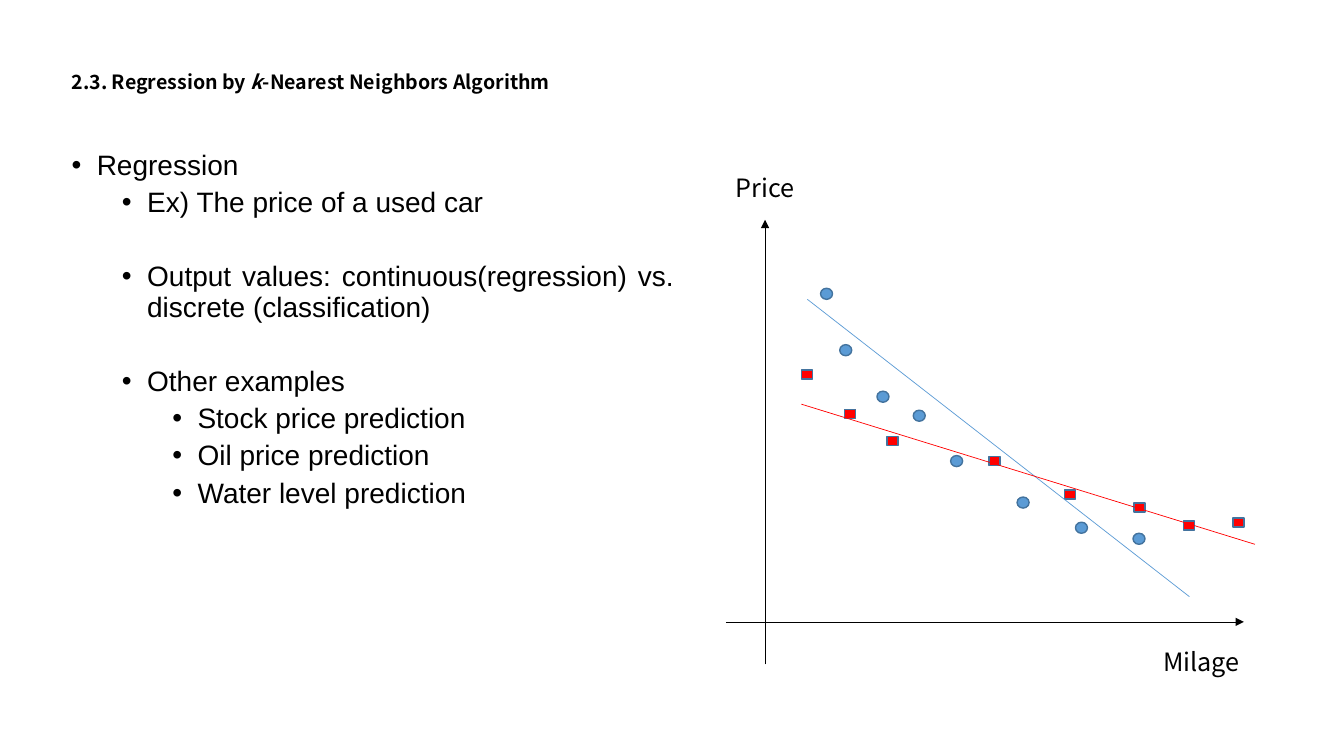
from lxml import etree
from pptx import Presentation
from pptx.dml.color import RGBColor
from pptx.enum.shapes import MSO_CONNECTOR, MSO_SHAPE
from pptx.enum.text import MSO_ANCHOR, MSO_AUTO_SIZE, PP_ALIGN
from pptx.oxml.ns import qn
from pptx.util import Pt

STRAIGHT = MSO_CONNECTOR.STRAIGHT
OVAL, RECTANGLE = MSO_SHAPE.OVAL, MSO_SHAPE.RECTANGLE
LEFT, JUSTIFY = PP_ALIGN.LEFT, PP_ALIGN.JUSTIFY
MIDDLE, TOP = MSO_ANCHOR.MIDDLE, MSO_ANCHOR.TOP
NO_FIT = MSO_AUTO_SIZE.NONE

SANS, BODY_FONT = "Noto Sans CJK KR", "Arial"
BLACK, BLUE, RED, OUTLINE = "000000", "5B9BD5", "FF0000", "43739E"

TITLE = [("2.3. Regression by ", False), ("k", True), ("-Nearest Neighbors Algorithm", False)]

OUTLINE_ITEMS = [
    (0, LEFT, 10, "Regression"),
    (1, LEFT, 5, "Ex) The price of a used car"),
    (1, JUSTIFY, 31.5, "Output values: continuous(regression) vs. discrete (classification)"),
    (1, JUSTIFY, 31.5, "Other examples"),
    (2, JUSTIFY, 5, "Stock price prediction"),
    (2, JUSTIFY, 5, "Oil price prediction"),
    (2, JUSTIFY, 5, "Water level prediction"),
]

BLUE_POINTS = [
    (586.1, 205.9), (599.8, 246.2), (626.4, 279.4), (652.3, 293),
    (679, 325.4), (726.5, 355), (768.2, 373), (809.3, 380.9),
]
RED_POINTS = [
    (572.4, 264.2), (603.4, 292.3), (633.6, 311.8), (706.3, 326.2),
    (760.3, 349.9), (810, 359.3), (845.3, 372.2), (880.6, 370.1),
]


def color(value):
    return RGBColor.from_string(value)


def style_font(font, name, size):
    font.name = name
    font.size = Pt(size)
    font.color.rgb = color(BLACK)


def place(box, left, top, width, height):
    box.left, box.top = Pt(left), Pt(top)
    box.width, box.height = Pt(width), Pt(height)


def add_bullet(para, level):
    properties = para._p.get_or_add_pPr()
    properties.set("marL", str(Pt(18 + 36 * level)))
    properties.set("indent", str(Pt(-18)))
    font = etree.SubElement(properties, qn("a:buFont"))
    font.set("typeface", BODY_FONT)
    etree.SubElement(properties, qn("a:buChar")).set("char", "•")


def fill_title(box):
    place(box, 43.9, 37.4, 828, 44.6)
    frame = box.text_frame
    frame.auto_size = NO_FIT
    frame.vertical_anchor = MIDDLE
    para = frame.paragraphs[0]
    para.alignment = LEFT
    para.line_spacing = 0.9
    style_font(para.font, SANS, 14)
    para.font.bold = True
    for text, italic in TITLE:
        span = para.add_run()
        span.text = text
        span.font.italic = italic


def fill_body(box):
    place(box, 43.9, 104.4, 445, 398.2)
    frame = box.text_frame
    frame.auto_size = NO_FIT
    frame.vertical_anchor = TOP
    frame.text = "\n".join(text for *_, text in OUTLINE_ITEMS)
    for para, (level, alignment, gap, _) in zip(frame.paragraphs, OUTLINE_ITEMS):
        para.level = level
        para.alignment = alignment
        para.line_spacing = 0.9
        para.space_before = Pt(gap)
        add_bullet(para, level)
        style_font(para.font, BODY_FONT, 20)


def add_label(chart, text, left, top, width):
    box = chart.shapes.add_textbox(Pt(left), Pt(top), Pt(width), Pt(28.8))
    box.text_frame.word_wrap = True
    para = box.text_frame.paragraphs[0]
    para.text = text
    style_font(para.font, SANS, 18)


def add_markers(chart, kind, points, width, height, fill):
    for left, top in points:
        marker = chart.shapes.add_shape(kind, Pt(left), Pt(top), Pt(width), Pt(height))
        marker.shadow.inherit = False
        marker.fill.solid()
        marker.fill.fore_color.rgb = color(fill)
        marker.line.color.rgb = color(OUTLINE)
        marker.line.width = Pt(1)


def add_line(chart, start, end, stroke, arrow=False):
    line = chart.shapes.add_connector(STRAIGHT, *map(Pt, start + end))
    line.line.color.rgb = color(stroke)
    line.line.width = Pt(0.5)
    if arrow:
        tail = etree.SubElement(line.line._get_or_add_ln(), qn("a:tailEnd"))
        tail.set("type", "triangle")
    etree.SubElement(line._element.spPr, qn("a:effectLst"))


def add_price_chart(page):
    chart = page.shapes.add_group_shape()
    add_label(chart, "Milage", 823.7, 457.9, 92.9)
    add_label(chart, "Price", 518.4, 119.5, 103)
    add_line(chart, (518.4, 444.2), (888.5, 444.2), BLACK, arrow=True)
    add_line(chart, (546.5, 474.5), (546.5, 157), BLACK, arrow=True)
    add_markers(chart, OVAL, BLUE_POINTS, 8.6, 7.9, BLUE)
    add_markers(chart, RECTANGLE, RED_POINTS, 7.9, 6.5, RED)
    add_line(chart, (576.7, 213.8), (849.6, 426.2), BLUE)
    add_line(chart, (572.4, 288.7), (896.4, 388.8), RED)


def main():
    deck = Presentation()
    deck.slide_width, deck.slide_height = Pt(960), Pt(540)
    page = deck.slides.add_slide(deck.slide_layouts[1])
    fill_title(page.shapes.title)
    fill_body(page.placeholders[1])
    add_price_chart(page)
    deck.save("out.pptx")


if __name__ == "__main__":
    main()
